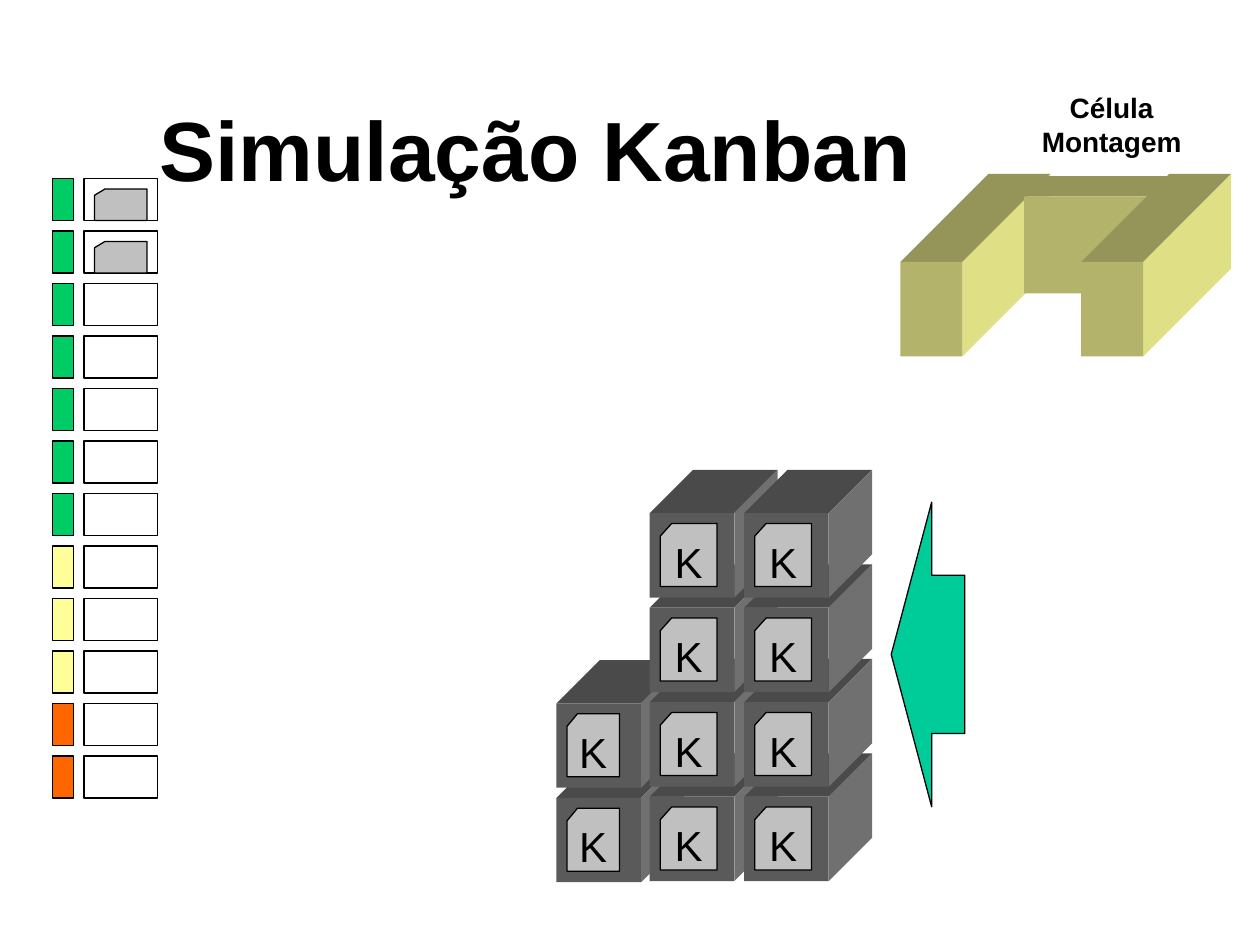
from pptx import Presentation
from pptx.dml.color import RGBColor
from pptx.enum.shapes import MSO_SHAPE
from pptx.enum.text import MSO_ANCHOR, MSO_AUTO_SIZE, PP_ALIGN
from pptx.util import Pt


def paint(shape, fill=None, line=None):
    """Set fill and outline from hex strings; None leaves that part out."""
    shape.shadow.inherit = False
    if fill:
        shape.fill.solid()
        shape.fill.fore_color.rgb = RGBColor.from_string(fill)
    else:
        shape.fill.background()
    if line:
        shape.line.color.rgb = RGBColor.from_string(line)
        shape.line.width = Pt(0.75)
    else:
        shape.line.fill.background()


def write(shape, text, size, bold=False):
    """Put centred black Arial text in a shape."""
    frame = shape.text_frame
    frame.text = text
    frame.word_wrap = False
    frame.vertical_anchor = MSO_ANCHOR.MIDDLE
    for para in frame.paragraphs:
        para.alignment = PP_ALIGN.CENTER
        for span in para.runs:
            span.font.name = "Arial"
            span.font.size = Pt(size)
            span.font.bold = bold
            span.font.color.rgb = RGBColor.from_string("000000")


deck = Presentation()
deck.slide_width, deck.slide_height = Pt(720), Pt(540)
page = deck.slides.add_slide(deck.slide_layouts[5])
shapes = page.shapes

# Title
title = shapes.title
title.left, title.top, title.width, title.height = Pt(0), Pt(48), Pt(612), Pt(80)
write(title, "Simulação Kanban", 48, bold=True)
title.text_frame.word_wrap = True
title.text_frame.auto_size = MSO_AUTO_SIZE.NONE
title.text_frame.vertical_anchor = MSO_ANCHOR.TOP
title.text_frame.margin_top = Pt(7.5)

# Kanban board: a colour zone and a card slot in each row
zones = ["00CC66"] * 7 + ["FFFF99"] * 3 + ["FF6600"] * 2
for row, zone in enumerate(zones):
    top = 102 + 30 * row
    marker = shapes.add_shape(MSO_SHAPE.RECTANGLE, Pt(30), Pt(top), Pt(12), Pt(24))
    paint(marker, zone, "000000")
    slot = shapes.add_shape(MSO_SHAPE.RECTANGLE, Pt(48), Pt(top), Pt(42), Pt(24))
    paint(slot, line="000000")
    if row < 2:
        card = shapes.add_shape(MSO_SHAPE.FLOWCHART_CARD, Pt(54), Pt(top + 6), Pt(30), Pt(18))
        paint(card, "C0C0C0", "000000")

# Blocks: left, top, width, height, depth, colours of front, top and side
grey = ("5A5A5A", "4A4A4A", "707070")
yellow = ("B3B36B", "95955A", "DFDF86")
stacks = [(318, 455.9, 2, 30), (371.3, 455.2, 4, 32.4), (425.3, 455.2, 4, 32.4)]
blocks = [
    (514.5, 149.7, 35.5, 54, 50.3, yellow),
    (585.2, 112.2, 74, 55.5, 11.5, yellow),
    (617.8, 149.7, 35.5, 54, 50.3, yellow),
]
for left, bottom_top, count, card_width in stacks:
    for level in range(count):
        blocks.append((left, bottom_top - 54 * level, 48.3, 48.3, 24.7, grey))

for left, top, width, height, depth, (front, lid, side) in blocks:
    right, bottom = left + width, top + height
    faces = [
        (lid, [(left, top), (left + depth, top - depth), (right + depth, top - depth), (right, top)]),
        (side, [(right, top), (right + depth, top - depth), (right + depth, bottom - depth), (right, bottom)]),
    ]
    for colour, corners in faces:
        points = [(Pt(x), Pt(y)) for x, y in corners]
        builder = shapes.build_freeform(*points[0])
        builder.add_line_segments(points[1:], close=True)
        paint(builder.convert_to_shape(), colour)
    face = shapes.add_shape(MSO_SHAPE.RECTANGLE, Pt(left), Pt(top), Pt(width), Pt(height))
    paint(face, front)

# Kanban cards on the stacked blocks
for left, bottom_top, count, card_width in stacks:
    for level in range(count):
        card = shapes.add_shape(MSO_SHAPE.FLOWCHART_CARD, Pt(left + 6), Pt(bottom_top - 54 * level + 6),
                                Pt(card_width), Pt(36))
        paint(card, "C0C0C0", "000000")
        write(card, "K", 24)

# Arrow towards the stacks
arrow = shapes.add_shape(MSO_SHAPE.LEFT_ARROW, Pt(509.3), Pt(287), Pt(42), Pt(174))
arrow.adjustments[0], arrow.adjustments[1] = 0.52, 0.55
paint(arrow, "00CC99", "000000")

# Assembly cell label
label = shapes.add_textbox(Pt(588), Pt(48), Pt(94.5), Pt(46))
write(label, "Célula\nMontagem", 16, bold=True)

deck.save("out.pptx")
